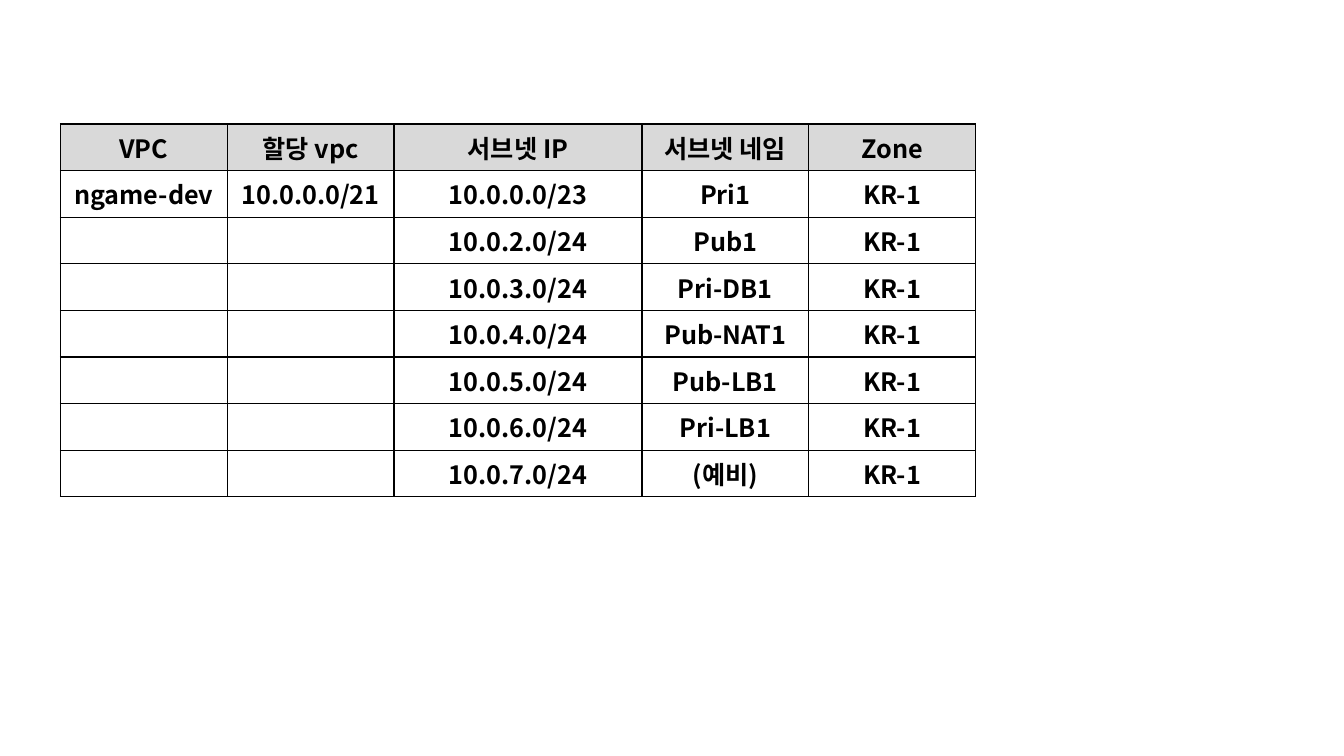
import pptx
import pptx.util
import pptx.dml.color
import pptx.enum.text
import pptx.oxml.ns
from lxml import etree

Pt = pptx.util.Pt
RGB = pptx.dml.color.RGBColor
qn = pptx.oxml.ns.qn

HEAD = ("VPC", "할당 vpc", "서브넷 IP", "서브넷 네임", "Zone")
SUBNETS = (
    ("10.0.0.0/23", "Pri1"),
    ("10.0.2.0/24", "Pub1"),
    ("10.0.3.0/24", "Pri-DB1"),
    ("10.0.4.0/24", "Pub-NAT1"),
    ("10.0.5.0/24", "Pub-LB1"),
    ("10.0.6.0/24", "Pri-LB1"),
    ("10.0.7.0/24", "(예비)"),
)
VPC = ("ngame-dev", "10.0.0.0/21")
ZONE = "KR-1"

FONT = "Noto Sans CJK KR"
BLACK = RGB(0, 0, 0)
GREY = RGB(0xD9, 0xD9, 0xD9)
WHITE = RGB(255, 255, 255)

LEFT, TOP = 43.2, 88.6
WIDTHS = (119.1, 119.1, 177.2, 119.1, 119.1)
ROW = 33.3


def outline(cell):
    """Draw a 1 pt black border on all four sides, below the fill in order."""
    props = cell._tc.get_or_add_tcPr()
    for place, side in enumerate(("lnL", "lnR", "lnT", "lnB")):
        line = etree.Element(qn("a:" + side), w=str(Pt(1)))
        fill = etree.SubElement(line, qn("a:solidFill"))
        etree.SubElement(fill, qn("a:srgbClr"), val=str(BLACK))
        props.insert(place, line)


def write(cell, text):
    para = cell.text_frame.paragraphs[0]
    para.alignment = pptx.enum.text.PP_ALIGN.CENTER
    font = para.font
    font.size, font.bold, font.name = Pt(18), True, FONT
    font.color.rgb = BLACK
    etree.SubElement(font._element, qn("a:ea"), typeface=FONT)
    if text:
        para.add_run().text = text


def main():
    deck = pptx.Presentation()
    deck.slide_width, deck.slide_height = Pt(960), Pt(540)
    slide = deck.slides.add_slide(deck.slide_layouts[6])

    rows = [HEAD]
    for i, subnet in enumerate(SUBNETS):
        rows.append((VPC if i == 0 else ("", "")) + subnet + (ZONE,))

    table = slide.shapes.add_table(
        len(rows), len(HEAD), Pt(LEFT), Pt(TOP),
        Pt(sum(WIDTHS)), Pt(ROW * len(rows))).table
    for col, width in zip(table.columns, WIDTHS):
        col.width = Pt(width)
    for r, row in enumerate(rows):
        table.rows[r].height = Pt(ROW)
        for c, text in enumerate(row):
            cell = table.cell(r, c)
            cell.vertical_anchor = pptx.enum.text.MSO_ANCHOR.MIDDLE
            cell.fill.solid()
            cell.fill.fore_color.rgb = WHITE if r else GREY
            outline(cell)
            write(cell, text)

    deck.save("out.pptx")


if __name__ == "__main__":
    main()
